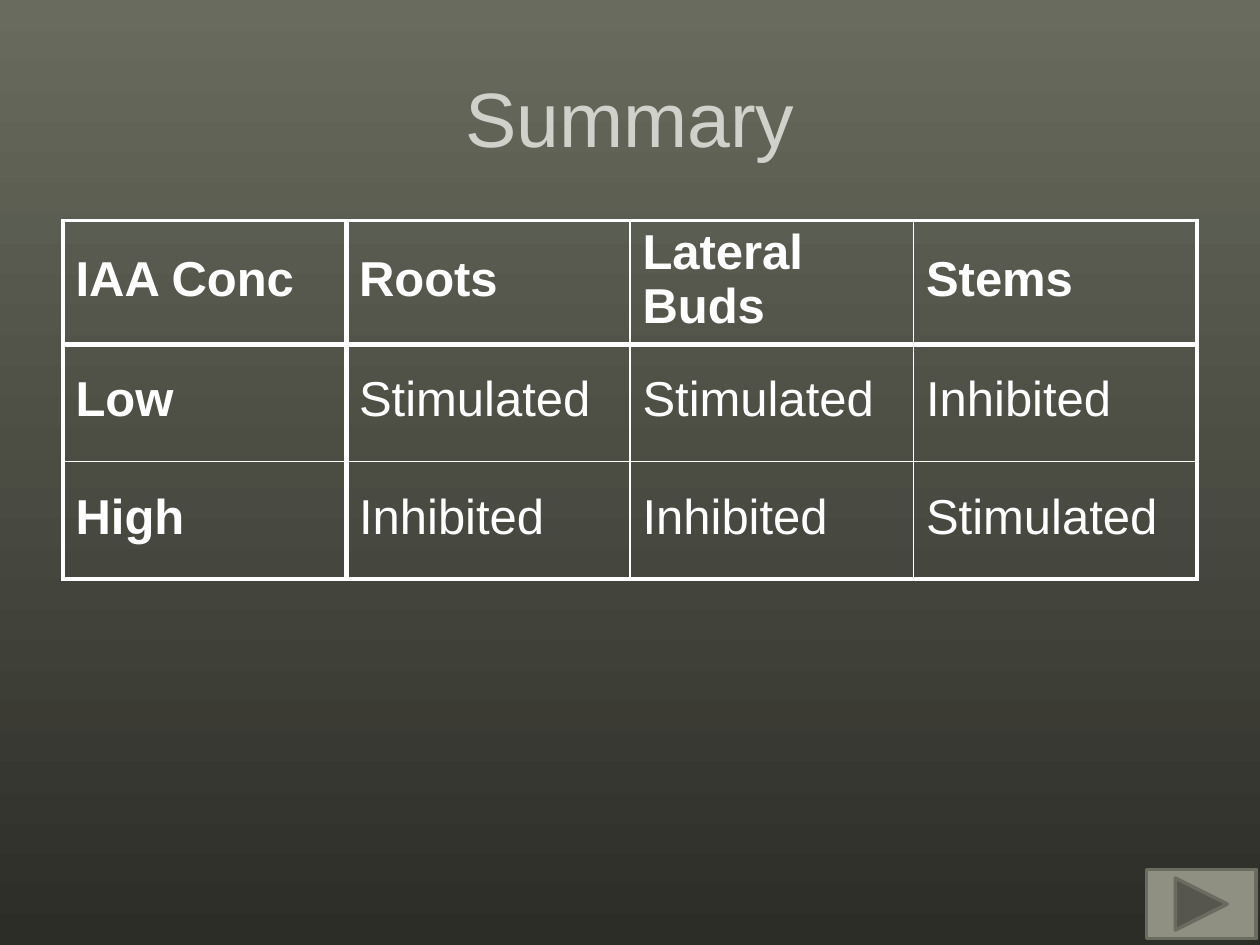
from lxml.etree import SubElement
from pptx import Presentation
from pptx.dml.color import RGBColor
from pptx.enum.shapes import MSO_SHAPE
from pptx.enum.text import MSO_ANCHOR, PP_ALIGN
from pptx.oxml.ns import qn
from pptx.util import Inches, Pt

WHITE = RGBColor(0xFF, 0xFF, 0xFF)
TITLE_GREY = RGBColor(0xD1, 0xD1, 0xCB)
OLIVE_TOP = RGBColor(0x68, 0x6B, 0x5D)
OLIVE_BOTTOM = RGBColor(0x2D, 0x2D, 0x28)
BUTTON_FILL = RGBColor(0x90, 0x90, 0x82)
BUTTON_LINE = RGBColor(0x6B, 0x6B, 0x60)

OUTER, HEADER, INNER = 2.25, 3, 1  # rule weights in points

RESPONSES = [
    ["IAA Conc", "Roots", "Lateral Buds", "Stems"],
    ["Low", "Stimulated", "Stimulated", "Inhibited"],
    ["High", "Inhibited", "Inhibited", "Stimulated"],
]
ROW_HEIGHTS = [0.98, 0.93, 0.93]


def rule_weight(index, count):
    """Weight of a grid rule: outer edges, the header separator, or inner."""
    if index in (0, count):
        return OUTER
    return HEADER if index == 1 else INNER


class SlideBuilder:
    font = "Arial"

    def __init__(self, slide):
        self.slide = slide

    def background(self, top, bottom):
        fill = self.slide.background.fill
        fill.gradient()
        fill.gradient_angle = 270
        for stop, color in zip(fill.gradient_stops, (top, bottom)):
            stop.color.rgb = color

    def set_text(self, paragraph, text, size, color, bold=False):
        paragraph.text = text
        font = paragraph.font
        font.name, font.size, font.bold = self.font, Pt(size), bold
        font.color.rgb = color

    def title(self, text, left, top, width, height):
        box = self.slide.shapes.add_textbox(
            Inches(left), Inches(top), Inches(width), Inches(height))
        frame = box.text_frame
        frame.word_wrap = True
        frame.vertical_anchor = MSO_ANCHOR.MIDDLE
        self.set_text(frame.paragraphs[0], text, 44, TITLE_GREY)
        frame.paragraphs[0].alignment = PP_ALIGN.CENTER

    def borders(self, cell, weights):
        properties = cell._tc.get_or_add_tcPr()
        for side, weight in weights.items():
            line = SubElement(properties, qn(f"a:ln{side}"), w=str(Pt(weight)))
            solid = SubElement(line, qn("a:solidFill"))
            SubElement(solid, qn("a:srgbClr"), val=str(WHITE))

    def table(self, rows, heights, left, top, width):
        row_count, column_count = len(rows), len(rows[0])
        table = self.slide.shapes.add_table(
            row_count, column_count, Inches(left), Inches(top),
            Inches(width), Inches(sum(heights))).table
        table.first_row = table.horz_banding = False
        for row, height in zip(table.rows, heights):
            row.height = Inches(height)
        for r, row in enumerate(rows):
            for c, text in enumerate(row):
                cell = table.cell(r, c)
                cell.vertical_anchor = MSO_ANCHOR.MIDDLE
                cell.margin_left = cell.margin_right = Inches(0.1)
                cell.margin_top, cell.margin_bottom = 0, Inches(0.05)
                paragraph = cell.text_frame.paragraphs[0]
                self.set_text(paragraph, text, 28, WHITE, bold=r == 0 or c == 0)
                paragraph.space_before = Pt(5.6)
                self.borders(cell, {
                    "L": rule_weight(c, column_count),
                    "R": rule_weight(c + 1, column_count),
                    "T": rule_weight(r, row_count),
                    "B": rule_weight(r + 1, row_count),
                })
                cell.fill.background()

    def next_button(self, left, top, width, height):
        button = self.slide.shapes.add_shape(
            MSO_SHAPE.ACTION_BUTTON_FORWARD_OR_NEXT,
            Inches(left), Inches(top), Inches(width), Inches(height))
        button.shadow.inherit = False
        button.fill.solid()
        button.fill.fore_color.rgb = BUTTON_FILL
        button.line.color.rgb = BUTTON_LINE
        button.line.width = Pt(2)


def main():
    presentation = Presentation()
    presentation.slide_width, presentation.slide_height = Inches(10), Inches(7.5)
    blank = presentation.slide_layouts[6]
    builder = SlideBuilder(presentation.slides.add_slide(blank))

    # Background and title
    builder.background(OLIVE_TOP, OLIVE_BOTTOM)
    builder.title("Summary", 0.5, 0.3, 9, 1.25)

    # Responses to each IAA concentration
    builder.table(RESPONSES, ROW_HEIGHTS, 0.5, 1.75, 9)

    # Navigation
    builder.next_button(9.1, 6.9, 0.87, 0.55)

    presentation.save("out.pptx")


if __name__ == "__main__":
    main()
